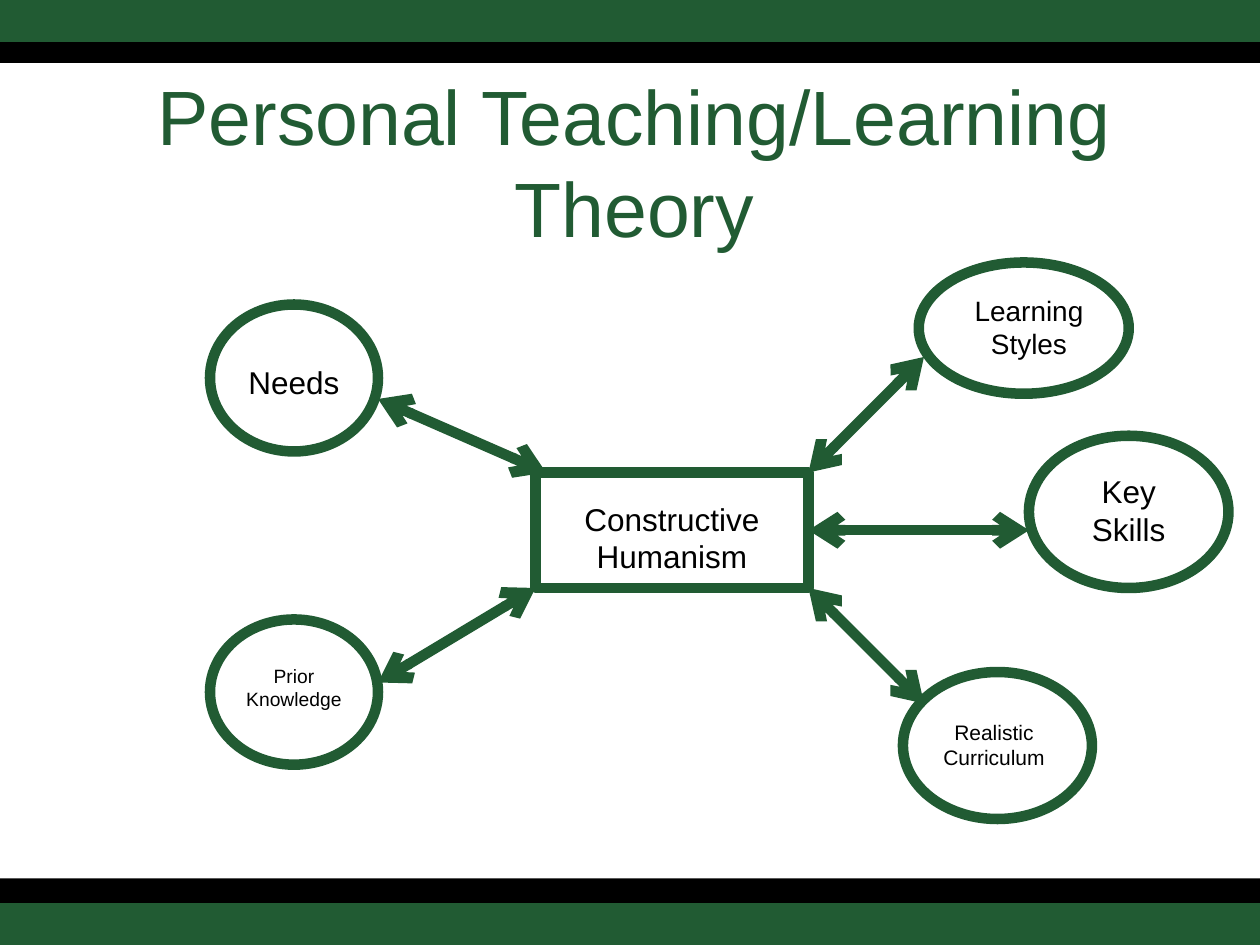
from lxml import etree
from pptx import Presentation
from pptx.dml.color import RGBColor
from pptx.enum import shapes, text
from pptx.oxml.ns import qn
from pptx.util import Pt

GREEN, BLACK = "215B33", "000000"
WIDE, HIGH = 720, 540
KIND = shapes.MSO_SHAPE

# Bands: top, height, colour
BANDS = [(516, 24, GREEN), (0, 24, GREEN), (502, 14, BLACK), (24, 12, BLACK)]

# Boxes are left, top, width, height
TITLE = ("Personal Teaching/Learning Theory", 44, (42, 66, 641, 52))
HUB = ("Constructive Humanism", 18, (306, 270, 156, 66), (306, 282, 156, 51))

# Topics: words, size, oval, label box
TOPICS = [
    ("Needs", 18, (120, 174, 96, 84), (132, 204, 72, 29)),
    ("Learning Styles", 16, (525, 150, 120, 75), (546, 164, 84, 46)),
    ("Key Skills", 18, (588, 249, 114, 87), (609, 266, 72, 51)),
    ("Prior Knowledge", 11, (120, 354, 96, 83), (132, 376, 72, 34)),
    ("Realistic Curriculum", 12, (516, 384, 108, 84), (527, 407.5, 82, 36)),
]

# Arrows: hub end, topic end
left, top, right, low = 306, 270, 462, 336
mid = (top + low) / 2
ARROWS = [
    ((312, top), (216, 228)),
    ((right, top), (528, 204)),
    ((left, low), (216, 390)),
    ((right, low), (528, 402)),
    ((right, mid), (588, mid)),
]


def tint(code):
    return RGBColor.from_string(code)


def place(box):
    return [Pt(n) for n in box]


def add_band(slide, y, high, code):
    band = slide.shapes.add_shape(KIND.RECTANGLE, *place((0, y, WIDE, high)))
    band.shadow.inherit = False
    band.fill.solid()
    band.fill.fore_color.rgb = tint(code)
    band.line.fill.background()


def add_ring(slide, kind, box):
    ring = slide.shapes.add_shape(kind, *place(box))
    ring.shadow.inherit = False
    ring.fill.background()
    ring.line.color.rgb = tint(GREEN)
    ring.line.width = Pt(6)


def add_label(slide, words, size, box, code=BLACK, anchor=text.MSO_ANCHOR.TOP):
    frame = slide.shapes.add_textbox(*place(box)).text_frame
    frame.word_wrap = True
    frame.vertical_anchor = anchor
    para = frame.paragraphs[0]
    para.alignment = text.PP_ALIGN.CENTER
    run = para.add_run()
    run.text = words
    run.font.name = "Arial"
    run.font.size = Pt(size)
    run.font.color.rgb = tint(code)


def add_arrow(slide, start, end):
    arrow = slide.shapes.add_connector(
        shapes.MSO_CONNECTOR.STRAIGHT, *place(start + end))
    arrow.line.color.rgb = tint(GREEN)
    arrow.line.width = Pt(6)
    # Open heads at both ends, no shadow
    line = arrow.line._get_or_add_ln()
    for tag in ("a:headEnd", "a:tailEnd"):
        etree.SubElement(line, qn(tag)).set("type", "arrow")
    etree.SubElement(arrow._element.spPr, qn("a:effectLst"))


def main():
    deck = Presentation()
    deck.slide_width, deck.slide_height = Pt(WIDE), Pt(HIGH)
    slide = deck.slides.add_slide(deck.slide_layouts[6])

    # Frame and title
    for band in BANDS:
        add_band(slide, *band)
    add_label(slide, *TITLE, GREEN, text.MSO_ANCHOR.MIDDLE)

    # Hub and arrows
    words, size, frame, label = HUB
    add_ring(slide, KIND.RECTANGLE, frame)
    for start, end in ARROWS:
        add_arrow(slide, start, end)
    add_label(slide, words, size, label)

    # Topics
    for words, size, oval, label in TOPICS:
        add_ring(slide, KIND.OVAL, oval)
        add_label(slide, words, size, label)

    deck.save("out.pptx")


if __name__ == "__main__":
    main()
